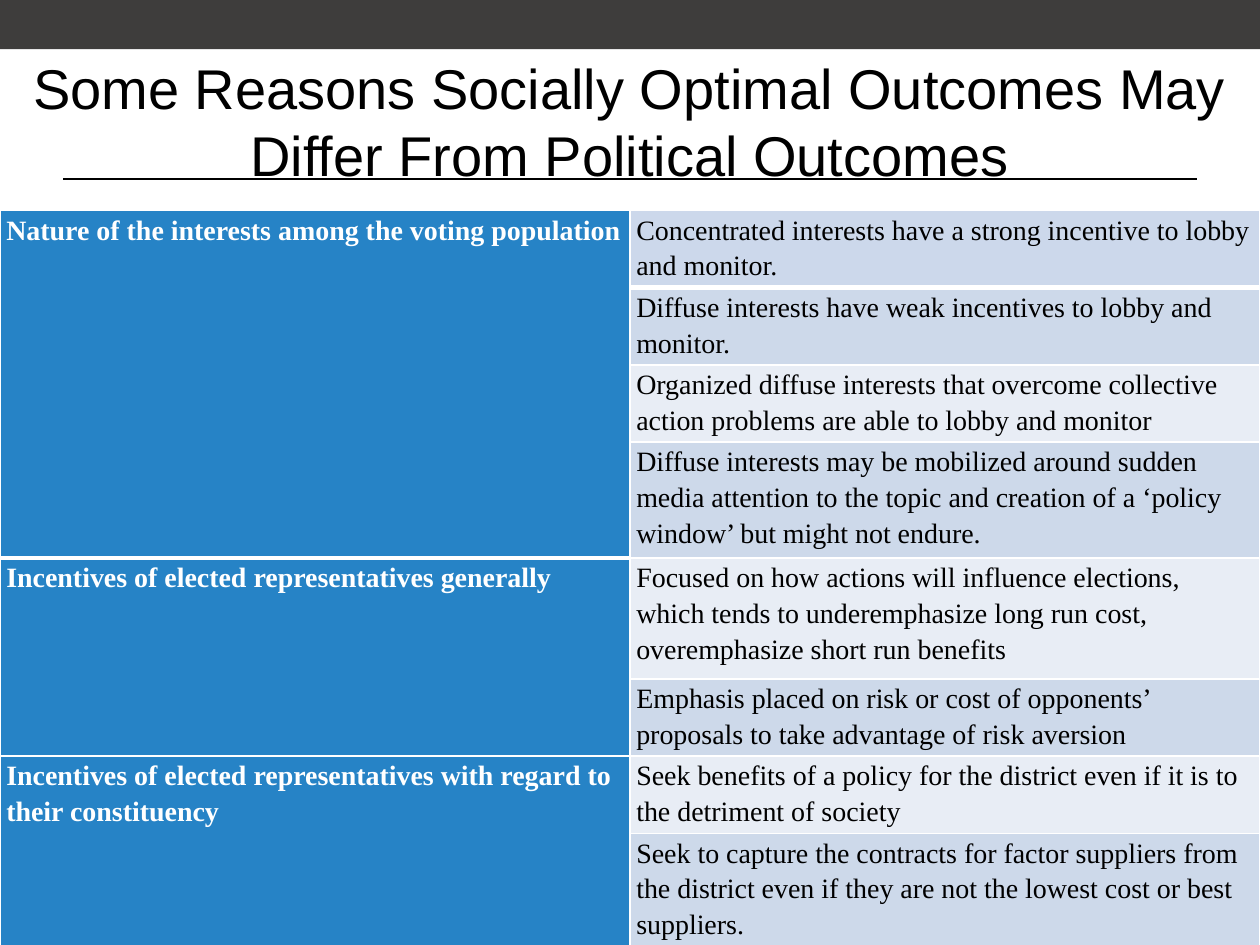
from lxml.etree import SubElement
from pptx import Presentation
from pptx.dml.color import RGBColor
from pptx.enum.shapes import MSO_CONNECTOR, MSO_SHAPE
from pptx.enum.text import MSO_ANCHOR, PP_ALIGN
from pptx.oxml import parse_xml
from pptx.oxml.ns import nsdecls, qn
from pptx.util import Inches, Pt

COLORS = {
    "bar": "3E3D3C",
    "black": "000000",
    "white": "FFFFFF",
    "topic": "2683C6",
    "first": "CCD8EB",
    "dark": "CDD9EA",
    "light": "E8EDF5",
}
TITLE = "Some Reasons Socially Optimal Outcomes May Differ From Political Outcomes"
# Each topic with its reasons and the height of each reason's row
TOPICS = [
    ("Nature of the interests among the voting population", [
        ("Concentrated interests have a strong incentive to lobby and monitor.", 0.61),
        ("Diffuse interests have weak incentives to lobby and monitor.", 0.61),
        ("Organized diffuse interests that overcome collective action problems "
         "are able to lobby and monitor", 0.61),
        ("Diffuse interests may be mobilized around sudden media attention to the "
         "topic and creation of a ‘policy window’ but might not endure.", 0.92),
    ]),
    ("Incentives of elected representatives generally", [
        ("Focused on how actions will influence elections, which tends to "
         "underemphasize long run cost, overemphasize short run benefits", 0.96),
        ("Emphasis placed on risk or cost of opponents’ proposals to take "
         "advantage of risk aversion", 0.61),
    ]),
    ("Incentives of elected representatives with regard to their constituency", [
        ("Seek benefits of a policy for the district even if it is to the "
         "detriment of society", 0.61),
        ("Seek to capture the contracts for factor suppliers from the district "
         "even if they are not the lowest cost or best suppliers.", 0.92),
    ]),
]


def rgb(name):
    return RGBColor.from_string(COLORS[name])


def set_font(p, name, size, color, bold=False):
    p.font.name = name
    p.font.size = Pt(size)
    p.font.bold = bold
    p.font.color.rgb = rgb(color)


def add_bar(slide):
    sp = slide.shapes.add_shape(MSO_SHAPE.RECTANGLE, 0, 0, Inches(10), Inches(0.39))
    sp.shadow.inherit = False
    sp.fill.solid()
    sp.fill.fore_color.rgb = rgb("bar")
    sp.line.fill.background()


def add_rule(slide):
    line = slide.shapes.add_connector(
        MSO_CONNECTOR.STRAIGHT, Inches(0.5), Inches(1.42), Inches(9.5), Inches(1.42))
    line.line.color.rgb = rgb("black")
    line.line.width = Pt(1.25)
    SubElement(line._element.spPr, qn("a:effectLst"))


def add_title(slide):
    box = slide.shapes.add_textbox(0, Inches(0.25), Inches(10), Inches(1.42))
    tf = box.text_frame
    tf.word_wrap = True
    tf.vertical_anchor = MSO_ANCHOR.MIDDLE
    p = tf.paragraphs[0]
    p.text = TITLE
    p.alignment = PP_ALIGN.CENTER
    set_font(p, "Arial", 32, "black")


def set_borders(cell, bottom):
    """Draw white cell borders, 1 pt except for the given bottom width."""
    tcPr = cell._tc.get_or_add_tcPr()
    for i, (side, width) in enumerate(zip("LRTB", (1, 1, 1, bottom))):
        tcPr.insert(i, parse_xml(
            f'<a:ln{side} {nsdecls("a")} w="{Pt(width)}"><a:solidFill>'
            f'<a:srgbClr val="{COLORS["white"]}"/></a:solidFill></a:ln{side}>'))


def style_cell(cell, fill, bottom):
    cell.margin_left = cell.margin_right = Inches(0.05)
    cell.margin_top = cell.margin_bottom = 0
    cell.fill.solid()
    cell.fill.fore_color.rgb = rgb(fill)
    set_borders(cell, bottom)


def write_cell(cell, text, color, bold=False):
    p = cell.text_frame.paragraphs[0]
    p.text = text
    p.line_spacing = 1.15
    set_font(p, "Times New Roman", 16, color, bold)


def add_reasons_table(slide):
    heights = [height for _, reasons in TOPICS for _, height in reasons]
    table = slide.shapes.add_table(
        len(heights), 2, 0, Inches(1.67), Inches(10), Inches(sum(heights))).table
    row = 0
    for topic, reasons in TOPICS:
        start = row
        for reason, height in reasons:
            table.rows[row].height = Inches(height)
            bottom = 3 if row == 0 else 1
            shade = "first" if row == 0 else "dark" if row % 2 else "light"
            style_cell(table.cell(row, 0), "topic", bottom)
            style_cell(table.cell(row, 1), shade, bottom)
            write_cell(table.cell(row, 1), reason, "black")
            row += 1
        table.cell(start, 0).merge(table.cell(row - 1, 0))
        write_cell(table.cell(start, 0), topic, "white", True)


def main():
    prs = Presentation()
    prs.slide_width, prs.slide_height = Inches(10), Inches(7.5)
    slide = prs.slides.add_slide(prs.slide_layouts[6])
    add_bar(slide)
    add_rule(slide)
    add_title(slide)
    add_reasons_table(slide)
    prs.save("out.pptx")


if __name__ == "__main__":
    main()
